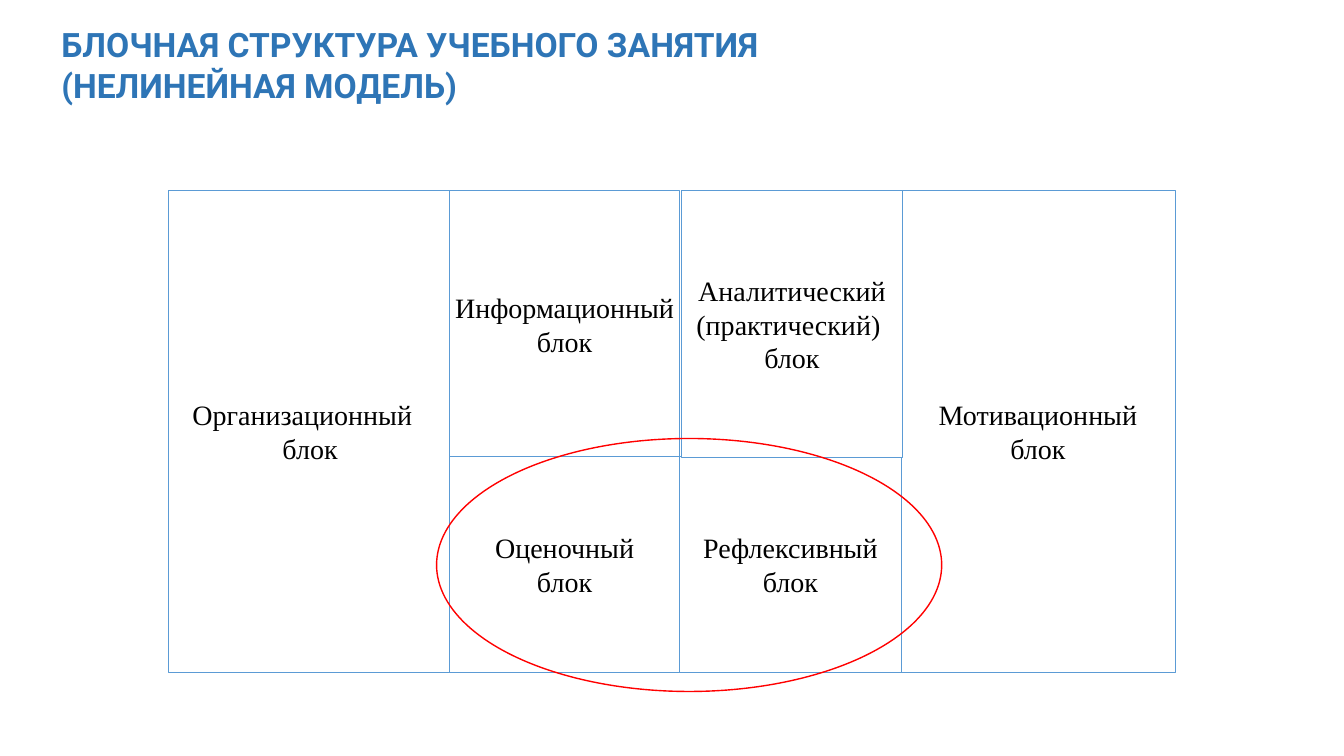
from pptx import Presentation
from pptx.dml.color import RGBColor
from pptx.enum import shapes, text
from pptx.util import Inches, Pt

TITLE_BLUE = RGBColor(0x2E, 0x75, 0xB6)
BORDER_BLUE = RGBColor(0x5B, 0x9B, 0xD5)
RED = RGBColor(0xFF, 0x00, 0x00)
BLACK = RGBColor(0x00, 0x00, 0x00)
WHITE = RGBColor(0xFF, 0xFF, 0xFF)

# Blocks: left, top, width, height inside the diagram, then lines of text
BLOCKS = [
    (0, 0, 2.81, 4.78, ["Организационный", "блок"]),
    (7.26, 0, 2.73, 4.78, ["Мотивационный", "блок"]),
    (2.79, 0, 2.28, 2.65, ["Информационный", "блок"]),
    (5.07, 2.64, 2.2, 2.14, ["Рефлексивный", "блок"]),
    (5.09, 0, 2.19, 2.65, ["Аналитический", "(практический) ", "блок"]),
    (2.79, 2.64, 2.28, 2.14, ["Оценочный", "блок"]),
]


def add_lines(tf, lines, font, size, color, bold=False, align=None):
    for i, line in enumerate(lines):
        p = tf.paragraphs[0] if i == 0 else tf.add_paragraph()
        p.alignment = align
        r = p.add_run()
        r.text = line
        r.font.name = font
        r.font.size = Pt(size)
        r.font.bold = bold
        r.font.color.rgb = color


def add_outline(slide, kind, x, y, w, h, color, width):
    sp = slide.shapes.add_shape(kind, Inches(x), Inches(y), Inches(w), Inches(h))
    sp.shadow.inherit = False
    sp.line.color.rgb = color
    sp.line.width = Pt(width)
    return sp


def add_title(slide, x, y, w, h):
    box = slide.shapes.add_textbox(Inches(x), Inches(y), Inches(w), Inches(h))
    tf = box.text_frame
    tf.word_wrap = True
    tf.auto_size = text.MSO_AUTO_SIZE.SHAPE_TO_FIT_TEXT
    add_lines(tf, ["БЛОЧНАЯ СТРУКТУРА УЧЕБНОГО ЗАНЯТИЯ", "(НЕЛИНЕЙНАЯ МОДЕЛЬ)"],
              "Roboto", 24, TITLE_BLUE, bold=True)


def add_diagram(slide, x, y):
    # Blocks of the lesson
    for left, top, w, h, lines in BLOCKS:
        sp = add_outline(slide, shapes.MSO_SHAPE.RECTANGLE,
                         x + left, y + top, w, h, BORDER_BLUE, 0.75)
        sp.fill.solid()
        sp.fill.fore_color.rgb = WHITE
        tf = sp.text_frame
        tf.word_wrap = False
        tf.vertical_anchor = text.MSO_ANCHOR.MIDDLE
        add_lines(tf, lines, "Times New Roman", 20, BLACK,
                  align=text.PP_ALIGN.CENTER)
        if left == 0:
            # The first line of the left block is indented from the edge
            p = tf.paragraphs[0]
            p.alignment = text.PP_ALIGN.LEFT
            p._p.get_or_add_pPr().set("marL", str(Inches(0.14)))

    # Ellipse around the two lower blocks
    ellipse = add_outline(slide, shapes.MSO_SHAPE.OVAL,
                          x + 2.66, y + 2.46, 5.01, 2.51, RED, 1)
    ellipse.fill.background()


def main():
    prs = Presentation()
    prs.slide_width = Inches(13.33)
    prs.slide_height = Inches(7.5)
    slide = prs.slides.add_slide(prs.slide_layouts[6])
    add_diagram(slide, 1.67, 1.89)
    add_title(slide, 0.51, 0.19, 10.47, 0.91)
    prs.save("out.pptx")


if __name__ == "__main__":
    main()
